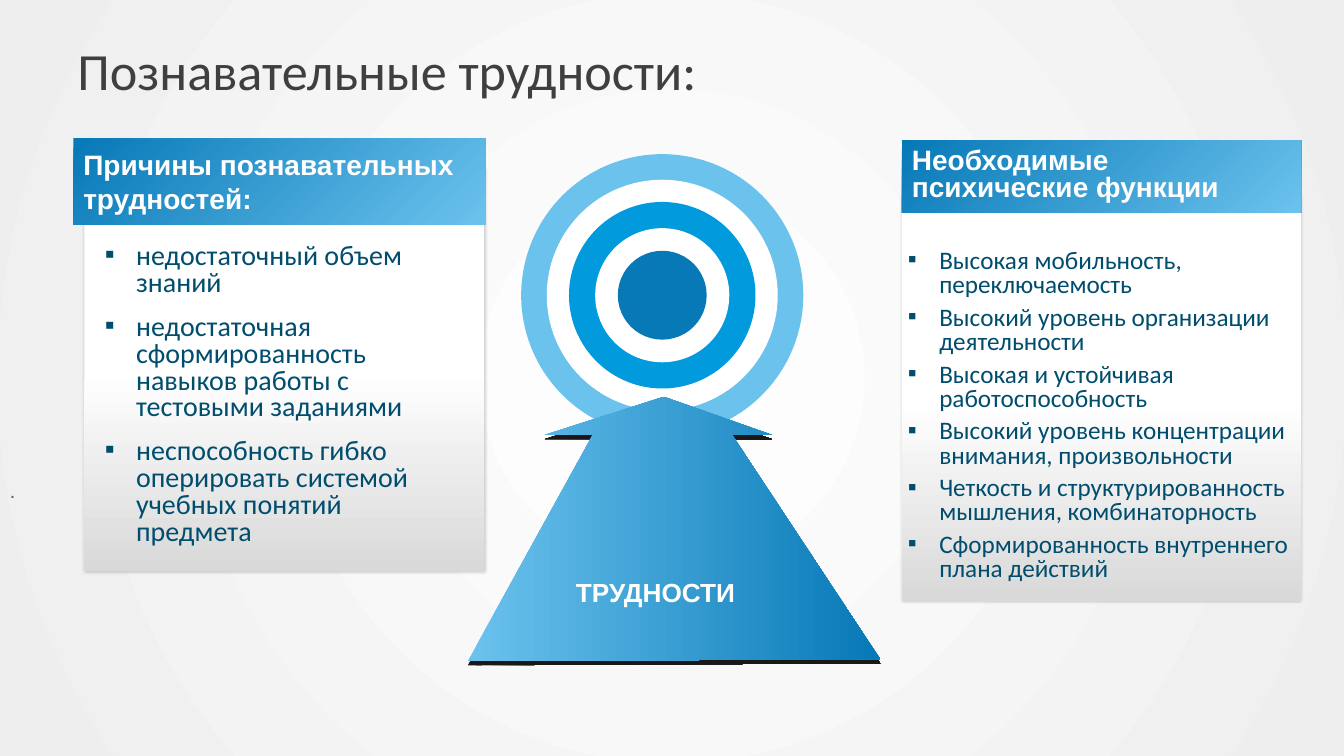
import pptx
import pptx.util
import pptx.dml.color
import pptx.enum.shapes
import pptx.enum.text
import pptx.oxml
import pptx.oxml.ns
import lxml.etree

Cm, Pt = pptx.util.Cm, pptx.util.Pt
RGB = pptx.dml.color.RGBColor.from_string
qn = pptx.oxml.ns.qn
SHAPE = pptx.enum.shapes.MSO_SHAPE
ALIGN = pptx.enum.text.PP_ALIGN
ANCHOR = pptx.enum.text.MSO_ANCHOR

THEME = {
    "blue": "0779B7", "sky": "6BC2ED", "azure": "019ADD", "white": "FFFFFF",
    "silver": "D9D9D9", "mist": "EEEEEE", "bullet": "014D6E",
    "title": {"name": "Calibri", "size": Pt(37.3), "color": "3F3F3F", "bold": False},
    "header": {"name": "Arial", "size": Pt(20), "color": "FFFFFF", "bold": True},
    "label": {"name": "Arial", "size": Pt(18.7), "color": "FFFFFF", "bold": True},
    "dot": {"name": "Arial", "size": Pt(14), "color": "595959", "bold": False},
    "causes": {"name": "Calibri", "size": Pt(20), "color": "004D6E", "bold": False},
    "functions": {"name": "Calibri", "size": Pt(18), "color": "014D6E", "bold": False},
}


def paint(sp, colors, angle=0, start=0, shadow=None):
    sp.shadow.inherit = False
    sp.line.fill.background()
    if len(colors) == 1:
        sp.fill.solid()
        sp.fill.fore_color.rgb = RGB(THEME[colors[0]])
    else:
        sp.fill.gradient()
        sp.fill.gradient_angle = angle
        for stop, color, position in zip(sp.fill.gradient_stops, colors, (start, 1)):
            stop.color.rgb = RGB(THEME[color])
            stop.position = position
    if shadow:
        blur, dist, alpha = shadow
        effects = sp.element.spPr.find(qn("a:effectLst"))
        outer = lxml.etree.SubElement(effects, qn("a:outerShdw"), blurRad=str(Pt(blur)),
                                      dist=str(Pt(dist)), dir="5400000", algn="ctr", rotWithShape="0")
        black = lxml.etree.SubElement(outer, qn("a:srgbClr"), val="000000")
        lxml.etree.SubElement(black, qn("a:alpha"), val=str(alpha * 1000))


def write(sp, lines, style, anchor=ANCHOR.TOP, **layout):
    tf = sp.text_frame
    frame = {"word_wrap": True, "auto_size": pptx.enum.text.MSO_AUTO_SIZE.NONE,
             "vertical_anchor": anchor, "margin_left": Cm(0.25), "margin_right": Cm(0.25),
             "margin_top": Cm(0.13), "margin_bottom": Cm(0.13)}
    for name, value in frame.items():
        setattr(tf, name, value)
    for i, line in enumerate(lines):
        p = tf.paragraphs[0] if i == 0 else tf.add_paragraph()
        for name, value in {"alignment": ALIGN.LEFT, **layout}.items():
            setattr(p, name, value)
        r = p.add_run()
        r.text = line
        for name, value in THEME[style].items():
            if name == "color":
                r.font.color.rgb = RGB(value)
            else:
                setattr(r.font, name, value)


prs = pptx.Presentation()
prs.slide_width, prs.slide_height = Cm(33.87), Cm(19.05)
s = prs.slides.add_slide(prs.slide_layouts[3])
title, causes, functions = s.placeholders

bg = s.background.fill
bg.gradient()
for stop, color in zip(bg.gradient_stops, ("white", "mist")):
    stop.color.rgb = RGB(THEME[color])
lin = s.element.find(".//" + qn("a:lin"))
lin.getparent().replace(lin, pptx.oxml.parse_xml(
    '<a:path xmlns:a="http://schemas.openxmlformats.org/drawingml/2006/main" path="circle">'
    '<a:fillToRect l="50000" t="50000" r="50000" b="50000"/></a:path>'))

columns = [
    {"panel": (2.13, 4.24, 10.08, 10.16), "bar": (1.85, 3.48, 10.39, 2.18),
     "header": "Причины познавательных трудностей:", "header_spacing": 1.0,
     "list": causes, "box": (2.39, 6.02, 8.41, 8.66), "style": "causes",
     "indent": 0.79, "after": 6,
     "items": ["недостаточный объем знаний",
               "недостаточная сформированность навыков работы с тестовыми заданиями",
               "неспособность гибко оперировать системой учебных понятий предмета"]},
    {"panel": (22.73, 4.98, 10.06, 10.16), "bar": (22.73, 3.53, 10.06, 1.83),
     "header": "Необходимые психические функции", "header_spacing": 0.8,
     "list": functions, "box": (22.33, 6.17, 11, 9.42), "style": "functions",
     "indent": 1.09, "after": 0,
     "items": ["Высокая мобильность, переключаемость",
               "Высокий уровень организации деятельности",
               "Высокая и устойчивая работоспособность",
               "Высокий уровень концентрации внимания, произвольности",
               "Четкость и структурированность мышления, комбинаторность",
               "Сформированность внутреннего плана действий"]},
]
for column in columns:
    panel = s.shapes.add_shape(SHAPE.RECTANGLE, *map(Cm, column["panel"]))
    paint(panel, ("white", "silver"), angle=270, start=0.5, shadow=(2, 0, 20))
    bar = s.shapes.add_shape(SHAPE.RECTANGLE, *map(Cm, column["bar"]))
    paint(bar, ("blue", "sky"), angle=315)
    write(bar, [column["header"]], "header", ANCHOR.MIDDLE, line_spacing=column["header_spacing"])

    sp = column["list"]
    sp.left, sp.top, sp.width, sp.height = map(Cm, column["box"])
    write(sp, column["items"], column["style"], line_spacing=0.8,
          space_before=Pt(6), space_after=Pt(column["after"]))
    for p in sp.text_frame.paragraphs:
        pPr = p._p.get_or_add_pPr()
        pPr.set("marL", str(Cm(column["indent"])))
        pPr.set("indent", str(-Cm(0.79)))
        color = lxml.etree.SubElement(pPr, qn("a:buClr"))
        lxml.etree.SubElement(color, qn("a:srgbClr"), val=THEME["bullet"])
        lxml.etree.SubElement(pPr, qn("a:buFont"), typeface="Arial")
        lxml.etree.SubElement(pPr, qn("a:buChar"), char="▪")
    bar.element.addnext(sp.element)

title.left, title.top, title.width, title.height = map(Cm, (1.7, 0.76, 30.48, 1.98))
write(title, ["Познавательные трудности:"], "title", ANCHOR.MIDDLE)

center_x, center_y = 16.69, 7.44
rings = [(7.11, "sky"), (5.82, "white"), (4.7, "azure"), (3.38, "white"), (2.24, "blue")]
for size, color in rings:
    ring = s.shapes.add_shape(SHAPE.OVAL, Cm(center_x - size / 2), Cm(center_y - size / 2),
                              Cm(size), Cm(size))
    paint(ring, (color,))

outline = [(13.73, 10.96), (14.94, 10.96), (11.79, 16.66), (22.18, 16.61),
           (18.45, 10.96), (19.45, 10.96), (16.73, 10)]
points = [(Cm(x), Cm(y)) for x, y in outline]
builder = s.shapes.build_freeform(*points[0])
builder.add_line_segments(points[1:], close=True)
arrow = builder.convert_to_shape()
paint(arrow, ("sky", "blue"), shadow=(0, 3, 90))

labels = [
    ("ТРУДНОСТИ", "label", ALIGN.CENTER, (13.46, 14.4, 6.12, 1.04)),
    (".", "dot", ALIGN.LEFT, (0, 11.94, 8.41, 1.42)),
]
for text, style, align, box in labels:
    write(s.shapes.add_textbox(*map(Cm, box)), [text], style, alignment=align)

prs.save("out.pptx")
